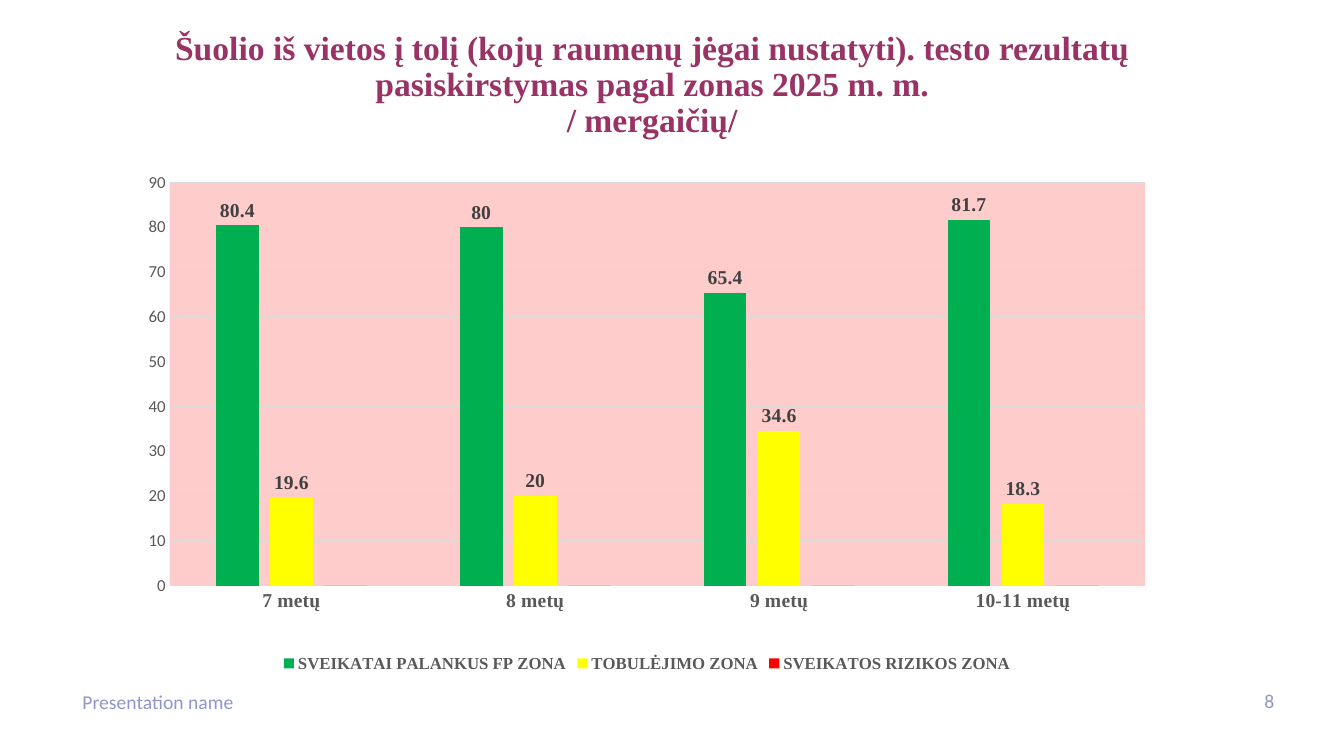
from lxml.etree import SubElement
from pptx import Presentation
from pptx.chart.data import CategoryChartData
from pptx.dml.color import RGBColor
from pptx.enum.chart import (XL_CHART_TYPE as ChartType, XL_LABEL_POSITION as LabelPosition,
                             XL_LEGEND_POSITION as LegendPosition, XL_TICK_MARK as TickMark)
from pptx.enum.text import MSO_ANCHOR as Anchor, MSO_AUTO_SIZE as AutoSize, PP_ALIGN as Align
from pptx.oxml import parse_xml
from pptx.oxml.ns import nsdecls, qn
from pptx.util import Pt

# Content
TITLE = ("Šuolio iš vietos į tolį (kojų raumenų jėgai nustatyti). testo rezultatų "
         "pasiskirstymas pagal zonas 2025 m. m.\v/ mergaičių/")
AGES = ["7 metų", "8 metų", "9 metų", "10-11 metų"]
ZONES = [  # name, values, colour, labelled
    ("SVEIKATAI PALANKUS FP ZONA", (80.4, 80, 65.4, 81.7), "00B050", True),
    ("TOBULĖJIMO ZONA", (19.6, 20, 34.6, 18.3), "FFFF00", True),
    ("SVEIKATOS RIZIKOS ZONA", (0, 0, 0, 0), "FF0000", False),
]
FOOTERS = [  # text, box, alignment
    ("Presentation name", (51.84, 488.88, 453.6, 27.36), Align.LEFT),
    ("8", (879.84, 488.88, 37.44, 28.8), Align.RIGHT),
]

# Geometry
SLIDE_SIZE = (960, 540)
TITLE_BOX = (51.84, 15.84, 828, 90.72)
CHART_BOX = (99.36, 123.12, 725.76, 360)
PLOT = {"x": 0.03, "y": 0.02, "w": 0.96, "h": 0.8}

SERIF, SANS = "Times New Roman", "Calibri"
THEME = {
    "title": {"name": SERIF, "size": Pt(24), "bold": True, "color": "993366"},
    "footer": {"name": SANS, "size": Pt(14), "bold": False, "color": "8E96CD"},
    "chart": {"name": SANS, "size": Pt(10), "color": "000000"},
    "ages": {"name": SERIF, "size": Pt(14), "bold": True, "color": "595959"},
    "scale": {"name": SANS, "size": Pt(12), "bold": False, "color": "595959"},
    "legend": {"name": SERIF, "size": Pt(12), "bold": True, "color": "595959"},
    "labels": {"name": SERIF, "size": Pt(14), "bold": True, "color": "404040"},
    "plot": "FFCCCC",
    "line": "D9D9D9",
}


def set_values(target, values):
    for name, value in values.items():
        setattr(target, name, value)


def style_font(font, role):
    for name, value in THEME[role].items():
        if name == "color":
            font.color.rgb = RGBColor.from_string(value)
        else:
            setattr(font, name, value)


def style_line(line):
    line.width = Pt(0.75)
    line.color.rgb = RGBColor.from_string(THEME["line"])


def add_title(page):
    title = page.shapes.title
    set_values(title, dict(zip(("left", "top", "width", "height"), map(Pt, TITLE_BOX))))
    frame = title.text_frame
    frame.text = TITLE
    set_values(frame, {"word_wrap": True, "auto_size": AutoSize.NONE,
                       "vertical_anchor": Anchor.MIDDLE})
    para = frame.paragraphs[0]
    set_values(para, {"alignment": Align.CENTER, "line_spacing": 0.9, "space_before": Pt(0)})
    for span in para.runs:
        style_font(span.font, "title")


def add_footers(page):
    for text, bounds, alignment in FOOTERS:
        frame = page.shapes.add_textbox(*map(Pt, bounds)).text_frame
        frame.word_wrap = True
        para = frame.paragraphs[0]
        para.alignment = alignment
        span = para.add_run()
        span.text = text
        style_font(span.font, "footer")


def style_plot_area(chart):
    """Place the inner plot area and fill its background."""
    area = chart._chartSpace.find(".//" + qn("c:plotArea"))
    for layout in area.findall(qn("c:layout")):
        area.remove(layout)
    layout = parse_xml(f"<c:layout {nsdecls('c')}><c:manualLayout/></c:layout>")
    settings = {"layoutTarget": "inner", "xMode": "edge", "yMode": "edge", **PLOT}
    for name, value in settings.items():
        SubElement(layout[0], qn("c:" + name)).set("val", str(value))
    area.insert(0, layout)
    area.append(parse_xml(
        f"<c:spPr {nsdecls('c', 'a')}><a:solidFill><a:srgbClr val=\"{THEME['plot']}\"/>"
        "</a:solidFill><a:ln><a:noFill/></a:ln></c:spPr>"))


def add_zone_chart(page):
    data = CategoryChartData()
    data.categories = AGES
    for name, values, _, _ in ZONES:
        data.add_series(name, values)
    chart = page.shapes.add_chart(ChartType.COLUMN_CLUSTERED, *map(Pt, CHART_BOX), data).chart
    style_font(chart.font, "chart")
    set_values(chart, {"has_title": False, "has_legend": True})
    set_values(chart.legend, {"position": LegendPosition.BOTTOM, "include_in_layout": False})
    style_font(chart.legend.font, "legend")

    # Axes
    ages, scale = chart.category_axis, chart.value_axis
    for axis, role in ((ages, "ages"), (scale, "scale")):
        set_values(axis, {"major_tick_mark": TickMark.NONE, "minor_tick_mark": TickMark.NONE})
        style_font(axis.tick_labels.font, role)
    style_line(ages.format.line)
    set_values(scale, {"minimum_scale": 0, "maximum_scale": 90, "major_unit": 10,
                       "has_major_gridlines": True})
    scale.format.line.fill.background()
    style_line(scale.major_gridlines.format.line)

    # Columns and their values
    plot = chart.plots[0]
    set_values(plot, {"gap_width": 219, "overlap": -27, "vary_by_categories": False})
    for series, (_, _, color, labelled) in zip(plot.series, ZONES):
        series.format.fill.solid()
        series.format.fill.fore_color.rgb = RGBColor.from_string(color)
        if labelled:
            labels = series.data_labels
            set_values(labels, {"show_value": True, "position": LabelPosition.OUTSIDE_END})
            style_font(labels.font, "labels")
    style_plot_area(chart)


def main():
    deck = Presentation()
    deck.slide_width, deck.slide_height = map(Pt, SLIDE_SIZE)
    page = deck.slides.add_slide(deck.slide_layouts[5])
    add_title(page)
    add_footers(page)
    add_zone_chart(page)
    deck.save("out.pptx")


if __name__ == "__main__":
    main()
